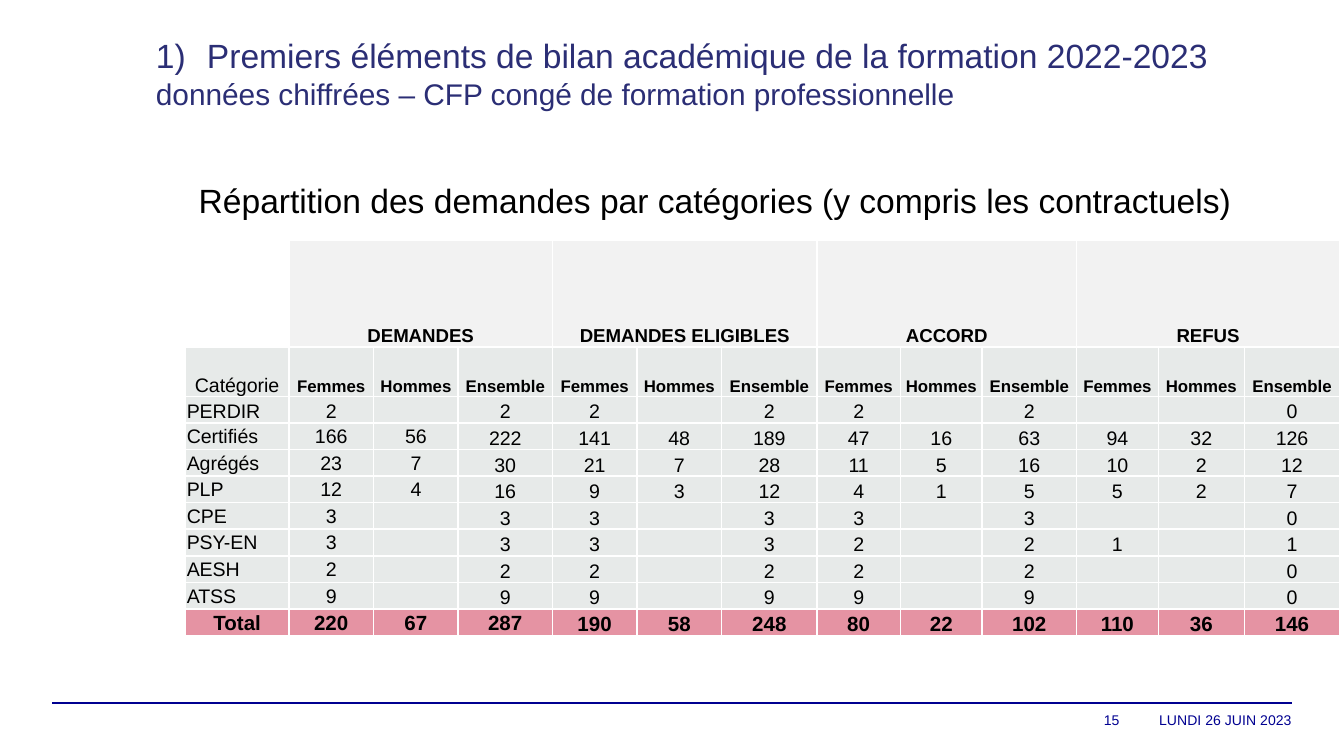
from lxml import etree
from pptx import Presentation
from pptx import util as u
from pptx.dml.color import RGBColor
from pptx.enum import shapes, text
from pptx.oxml import ns

WIDTH = 10
HEIGHT = WIDTH * 9 / 16
FONT = "Arial"
COLOURS = {"title": "2B2E75", "footer": "000091", "text": "000000", "border": "FFFFFF",
           "corner": "FFFFFF", "group": "F2F2F2", "body": "E7EAE9", "total": "E593A3"}
LEFT, CENTRE, RIGHT = text.PP_ALIGN.LEFT, text.PP_ALIGN.CENTER, text.PP_ALIGN.RIGHT
TOP, MIDDLE, BOTTOM = (text.MSO_ANCHOR.TOP, text.MSO_ANCHOR.MIDDLE,
                       text.MSO_ANCHOR.BOTTOM)

GROUPS = ["DEMANDES", "DEMANDES ELIGIBLES", "ACCORD", "REFUS"]
MEASURES = ["Femmes", "Hommes", "Ensemble"]
# One (women, men) pair per group; zero shows as an empty cell.
COUNTS = {
    "PERDIR": [(2, 0), (2, 0), (2, 0), (0, 0)],
    "Certifiés": [(166, 56), (141, 48), (47, 16), (94, 32)],
    "Agrégés": [(23, 7), (21, 7), (11, 5), (10, 2)],
    "PLP": [(12, 4), (9, 3), (4, 1), (5, 2)],
    "CPE": [(3, 0), (3, 0), (3, 0), (0, 0)],
    "PSY-EN": [(3, 0), (3, 0), (2, 0), (1, 0)],
    "AESH": [(2, 0), (2, 0), (2, 0), (0, 0)],
    "ATSS": [(9, 0), (9, 0), (9, 0), (0, 0)],
}
COLUMN_WIDTHS = [0.77, 0.63, 0.63, 0.7, 0.63, 0.63, 0.71,
                 0.62, 0.61, 0.7, 0.61, 0.64, 0.71]
HEADER_HEIGHTS = [0.79, 0.37]


def inches(box):
    return [u.Inches(length) for length in box]


def add_span(para, words, size, colour, bold=False):
    span = para.add_run()
    span.text = words
    span.font.name = FONT
    span.font.size = u.Pt(size)
    span.font.bold = bold
    span.font.color.rgb = RGBColor.from_string(COLOURS[colour])


def add_line_of_text(page, box, words, size, colour, align=LEFT, anchor=TOP, inset=None):
    label = page.shapes.add_textbox(*inches(box))
    frame = label.text_frame
    frame.word_wrap = True
    frame.vertical_anchor = anchor
    if inset is not None:
        frame.margin_left = frame.margin_right = u.Inches(inset)
        frame.margin_top = frame.margin_bottom = u.Inches(inset)
    para = frame.paragraphs[0]
    para.alignment = align
    add_span(para, words, size, colour)


def number_paragraph(para, indent):
    """Number the paragraph as 1), with a hanging indent in inches."""
    props = para._p.get_or_add_pPr()
    props.set("marL", str(u.Inches(indent)))
    props.set("indent", str(u.Inches(-indent)))
    etree.SubElement(props, ns.qn("a:buFont"), typeface="+mj-lt")
    etree.SubElement(props, ns.qn("a:buAutoNum"), type="arabicParenR")


def add_heading(page, box):
    title = page.shapes.title
    title.left, title.top, title.width, title.height = inches(box)
    frame = title.text_frame
    frame.word_wrap = True
    frame.auto_size = text.MSO_AUTO_SIZE.NONE
    frame.vertical_anchor = TOP
    first, second = frame.paragraphs[0], frame.add_paragraph()
    number_paragraph(first, 0.38)
    first.alignment = second.alignment = LEFT
    add_span(first, "Premiers éléments de bilan académique de la formation 2022-2023",
             18, "title")
    add_span(second, "données chiffrées – CFP congé de formation professionnelle",
             16, "title")


def add_borders(cell):
    props = cell._tc.get_or_add_tcPr()
    for side in ("lnL", "lnR", "lnT", "lnB"):
        line = etree.SubElement(props, ns.qn(f"a:{side}"), w=str(u.Pt(1)))
        fill = etree.SubElement(line, ns.qn("a:solidFill"))
        etree.SubElement(fill, ns.qn("a:srgbClr"), val=COLOURS["border"])


def fill_cell(cell, words, size, fill, bold=False, align=CENTRE, anchor=BOTTOM):
    add_borders(cell)
    cell.fill.solid()
    cell.fill.fore_color.rgb = RGBColor.from_string(COLOURS[fill])
    cell.margin_left = cell.margin_right = cell.margin_top = u.Inches(0.01)
    cell.margin_bottom = 0
    cell.vertical_anchor = anchor
    para = cell.text_frame.paragraphs[0]
    para.alignment = align
    if words:
        add_span(para, words, size, "text", bold)
    else:  # keeps an empty cell from stretching its row
        etree.SubElement(para._p, ns.qn("a:endParaRPr"), sz=str(int(size * 100)))


def with_sums(pairs):
    """Flatten (women, men) pairs into women, men and sum, as text."""
    return [word for women, men in pairs
            for word in (str(women or ""), str(men or ""), str(women + men))]


def add_counts_table(page, box):
    heads, step = len(HEADER_HEIGHTS), len(MEASURES)
    row_count = heads + len(COUNTS) + 1
    table = page.shapes.add_table(row_count, len(COLUMN_WIDTHS), *inches(box)).table
    table.first_row = table.horz_banding = False
    for column, width in zip(table.columns, COLUMN_WIDTHS):
        column.width = u.Inches(width)
    body_height = (box[3] - sum(HEADER_HEIGHTS)) / (row_count - heads)
    for row, height in zip(table.rows, HEADER_HEIGHTS + [body_height] * (row_count - heads)):
        row.height = u.Inches(height)

    group_words = [""] + [word for group in GROUPS for word in [group] + [""] * (step - 1)]
    for col, words in enumerate(group_words):
        fill_cell(table.cell(0, col), words, 10, "group" if col else "corner", bold=True)
    for col in range(1, len(COLUMN_WIDTHS), step):
        table.cell(0, col).merge(table.cell(0, col + step - 1))
    for col, words in enumerate(["Catégorie"] + MEASURES * len(GROUPS)):
        fill_cell(table.cell(1, col), words, 9 if col else 10.5, "body", bold=col > 0)

    for row, (category, pairs) in enumerate(COUNTS.items(), heads):
        for col, words in enumerate([category] + with_sums(pairs)):
            fill_cell(table.cell(row, col), words, 10.5, "body",
                      align=CENTRE if col else LEFT,
                      anchor=MIDDLE if row > heads and col < step else BOTTOM)
    totals = [[sum(side) for side in zip(*group)] for group in zip(*COUNTS.values())]
    for col, words in enumerate(["Total"] + with_sums(totals)):
        fill_cell(table.cell(row_count - 1, col), words, 11, "total", bold=True,
                  anchor=MIDDLE if col <= step else BOTTOM)


def add_footer(page, box):
    left, top, width, height = box
    rule = page.shapes.add_connector(shapes.MSO_CONNECTOR.STRAIGHT,
                                     *inches((left, top, left + width, top)))
    rule.line.color.rgb = RGBColor.from_string(COLOURS["footer"])
    rule.line.width = u.Pt(0.8)
    etree.SubElement(rule._element.spPr, ns.qn("a:effectLst"))
    right = left + width
    for words, cell_width in (("LUNDI 26 JUIN 2023", 1.28), ("15", 1.48)):
        right -= cell_width
        add_line_of_text(page, (right, top, cell_width, height), words, 7.5, "footer",
                         RIGHT, MIDDLE, inset=0)


def main():
    deck = Presentation()
    deck.slide_width, deck.slide_height = inches((WIDTH, HEIGHT))
    page = deck.slides.add_slide(deck.slide_layouts.get_by_name("Title Only"))
    add_footer(page, (0.39, 5.23, WIDTH - 2 * 0.39, 0.26))
    add_heading(page, (1.06, 0.21, 8.35, 1.55))
    add_line_of_text(page, (1.38, 1.29, 8.11, 0.4),
                     "Répartition des demandes par catégories (y compris les contractuels)",
                     18, "text")
    add_counts_table(page, (1.38, 1.79, sum(COLUMN_WIDTHS), 2.94))
    deck.save("out.pptx")


if __name__ == "__main__":
    main()
